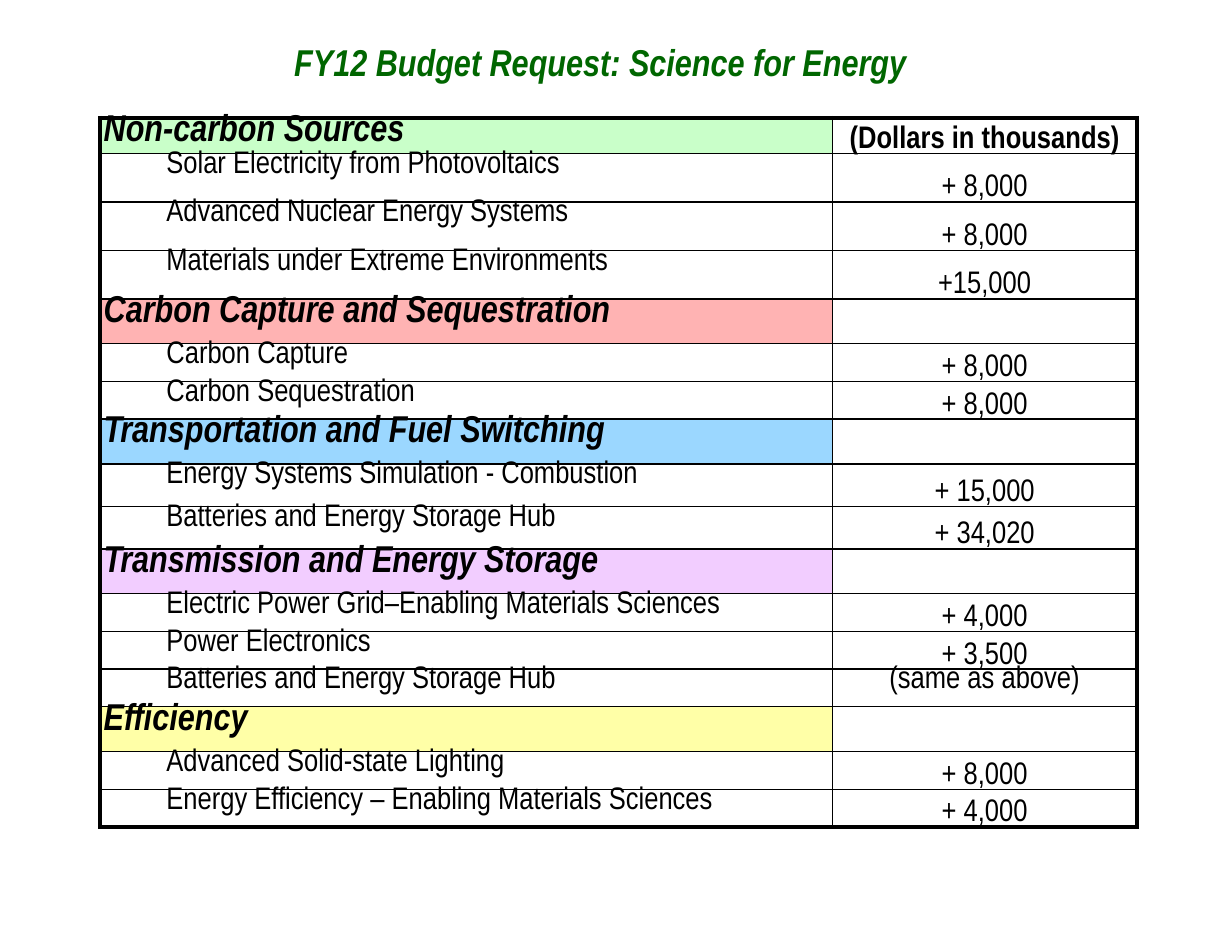
from pptx import Presentation
from pptx.dml.color import RGBColor
from pptx.enum.text import MSO_ANCHOR, PP_ALIGN
from pptx.oxml import parse_xml
from pptx.oxml.ns import nsdecls
from pptx.util import Pt

COLORS = {
    "black": "000000", "title": "006600", "green": "C9FFC9", "red": "FFB3B3",
    "blue": "9BD7FF", "violet": "F2CDFF", "yellow": "FFFFA7",
}
SECTIONS = [
    ("Non-carbon Sources", "(Dollars in thousands)", "green", 22.8, 31.2, [
        ("Solar Electricity from Photovoltaics", "+ 8,000"),
        ("Advanced Nuclear Energy Systems", "+ 8,000"),
        ("Materials under Extreme Environments", "+15,000")]),
    ("Carbon Capture and Sequestration", "", "red", 28.9, 24.2, [
        ("Carbon Capture", "+ 8,000"),
        ("Carbon Sequestration", "+ 8,000")]),
    ("Transportation and Fuel Switching", "", "blue", 28.9, 27.3, [
        ("Energy Systems Simulation - Combustion", "+ 15,000"),
        ("Batteries and Energy Storage Hub", "+ 34,020")]),
    ("Transmission and Energy Storage", "", "violet", 28.9, 24.2, [
        ("Electric Power Grid–Enabling Materials Sciences", "+ 4,000"),
        ("Power Electronics", "+ 3,500"),
        ("Batteries and Energy Storage Hub", "(same as above)")]),
    ("Efficiency", "", "yellow", 28.9, 24.2, [
        ("Advanced Solid-state Lighting", "+ 8,000"),
        ("Energy Efficiency – Enabling Materials Sciences", "+ 4,000")]),
]


class Deck:
    font = "Arial Narrow"
    thick, thin = 3, 1

    def __init__(self, width, height):
        self.prs = Presentation()
        self.prs.slide_width, self.prs.slide_height = Pt(width), Pt(height)
        self.s = self.prs.slides.add_slide(self.prs.slide_layouts[6])

    def run(self, p, text, size, bold=False, italic=False, color="black"):
        r = p.add_run()
        r.text = text
        f = r.font
        f.name, f.size, f.bold, f.italic = self.font, Pt(size), bold, italic
        f.color.rgb = RGBColor.from_string(COLORS[color])

    def title(self, text, x, y, w, h):
        tf = self.s.shapes.add_textbox(Pt(x), Pt(y), Pt(w), Pt(h)).text_frame
        tf.word_wrap = True
        tf.margin_left = tf.margin_right = Pt(7.9)
        tf.margin_top = tf.margin_bottom = Pt(4)
        p = tf.paragraphs[0]
        p.alignment = PP_ALIGN.CENTER
        self.run(p, text, 24, True, True, "title")

    def table(self, x, y, widths, heights):
        shape = self.s.shapes.add_table(len(heights), len(widths), Pt(x), Pt(y),
                                        Pt(sum(widths)), Pt(sum(heights)))
        table = shape.table
        table.first_row = table.horz_banding = False
        for col, w in zip(table.columns, widths):
            col.width = Pt(w)
        for row, h in zip(table.rows, heights):
            row.height = Pt(h)
        for i in range(len(heights)):
            for j in range(len(widths)):
                cell = table.cell(i, j)
                cell.margin_left = cell.margin_right = Pt(2.2)
                cell.margin_top = cell.margin_bottom = 0
                self.borders(cell, L=j == 0, R=j == len(widths) - 1,
                             T=i == 0, B=i == len(heights) - 1)
                cell.fill.background()
        return table

    def borders(self, cell, **outer):
        tcPr = cell._tc.get_or_add_tcPr()
        for side, is_outer in outer.items():
            width = Pt(self.thick if is_outer else self.thin)
            tcPr.append(parse_xml(
                f'<a:ln{side} {nsdecls("a")} w="{width}"><a:solidFill>'
                f'<a:srgbClr val="{COLORS["black"]}"/></a:solidFill></a:ln{side}>'))

    def cell_text(self, cell, text, size=20, bold=False, italic=False):
        p = cell.text_frame.paragraphs[0]
        p.line_spacing = 0.85
        p.space_after = Pt(2)
        self.run(p, text, size, bold, italic)
        return p

    def heading(self, cell, text, fill):
        cell.fill.solid()
        cell.fill.fore_color.rgb = RGBColor.from_string(COLORS[fill])
        self.cell_text(cell, text, 24, True, True)

    def item(self, cell, text):
        p = self.cell_text(cell, text)
        p.level = 1
        pPr = p._p.get_or_add_pPr()
        pPr.set("marL", str(Pt(40.3)))
        pPr.set("indent", "0")

    def amount(self, cell, text, bold=False):
        p = self.cell_text(cell, text, bold=bold)
        p.alignment = PP_ALIGN.CENTER
        if text != "(same as above)":
            cell.vertical_anchor = MSO_ANCHOR.BOTTOM


def main():
    deck = Deck(792, 612)
    heights = []
    for _, _, _, head_h, item_h, items in SECTIONS:
        heights += [head_h] + [item_h] * len(items)
    table = deck.table(64.5, 75.8, [470.5, 196], heights)
    row = 0
    for name, unit, fill, _, _, items in SECTIONS:
        deck.heading(table.cell(row, 0), name, fill)
        if unit:
            deck.amount(table.cell(row, 1), unit, bold=True)
        for row, (label, value) in enumerate(items, row + 1):
            deck.item(table.cell(row, 0), label)
            deck.amount(table.cell(row, 1), value)
        row += 1
    deck.title("FY12 Budget Request: Science for Energy", 0, 21, 772, 37)
    deck.prs.save("out.pptx")


if __name__ == "__main__":
    main()
